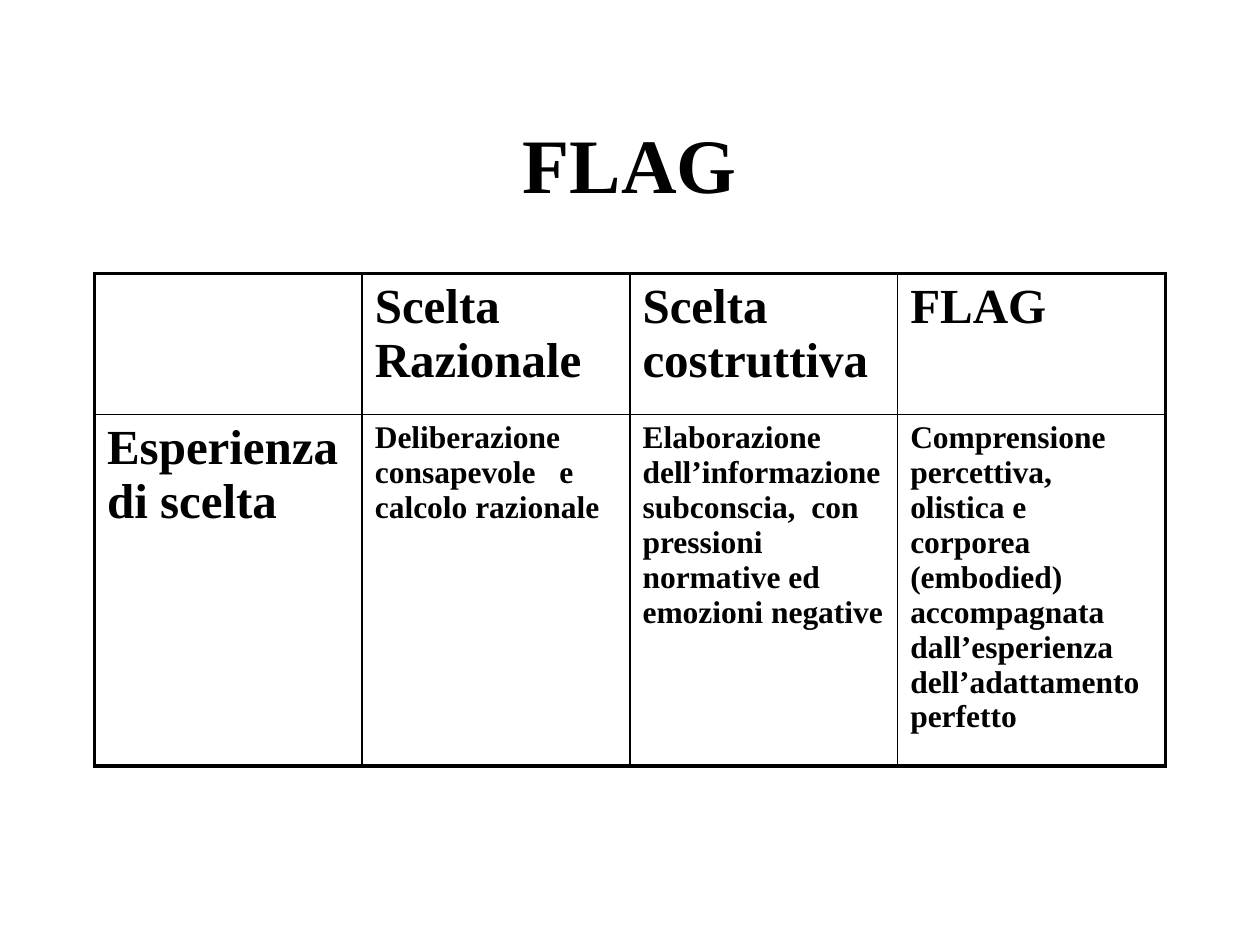
from typing import NamedTuple

from lxml import etree
from pptx import Presentation
from pptx.dml.color import RGBColor
from pptx.enum import text
from pptx.oxml import ns
from pptx.util import Inches, Pt

COLORS = {"ink": "000000"}
FONT = "Times New Roman"
OUTER, INNER = Pt(2.25), Pt(1)


class Entry(NamedTuple):
    wording: str
    size: int


HEADING, BODY = 28, 18
ROWS = [
    [Entry("", HEADING), Entry("Scelta Razionale", HEADING),
     Entry("Scelta costruttiva", HEADING), Entry("FLAG", HEADING)],
    [Entry("Esperienza di scelta", HEADING),
     Entry("Deliberazione consapevole   e calcolo razionale", BODY),
     Entry("Elaborazione dell’informazione subconscia,  con   pressioni "
           "normative ed emozioni negative", BODY),
     Entry("Comprensione percettiva, olistica e corporea (embodied) accompagnata "
           "dall’esperienza dell’adattamento perfetto", BODY)],
]
ROW_HEIGHTS = [1.12, 2.79]


def write(paragraph, wording: str, size: int) -> None:
    run = paragraph.add_run()
    run.text = wording
    run.font.name = FONT
    run.font.size = Pt(size)
    run.font.bold = True
    run.font.color.rgb = RGBColor.from_string(COLORS["ink"])


def set_borders(cell, widths: dict[str, int]) -> None:
    """Put the border lines ahead of the cell's fill, in schema order."""
    properties = cell._tc.get_or_add_tcPr()
    for position, (side, width) in enumerate(widths.items()):
        line = etree.Element(ns.qn(f"a:ln{side}"), w=str(int(width)))
        fill = etree.SubElement(line, ns.qn("a:solidFill"))
        etree.SubElement(fill, ns.qn("a:srgbClr"), val=COLORS["ink"])
        properties.insert(position, line)


def add_comparison(slide) -> None:
    row_count, column_count = len(ROWS), len(ROWS[0])
    width = Inches(8.5)
    comparison = slide.shapes.add_table(
        row_count, column_count, Inches(0.75), Inches(2.17),
        width, Inches(sum(ROW_HEIGHTS))).table
    comparison.first_row = comparison.horz_banding = False
    for column in comparison.columns:
        column.width = width // column_count
    for r, entries in enumerate(ROWS):
        comparison.rows[r].height = Inches(ROW_HEIGHTS[r])
        for c, entry in enumerate(entries):
            cell = comparison.cell(r, c)
            cell.fill.background()
            set_borders(cell, {
                "L": OUTER if c == 0 else INNER,
                "R": OUTER if c == column_count - 1 else INNER,
                "T": OUTER if r == 0 else INNER,
                "B": OUTER if r == row_count - 1 else INNER,
            })
            if entry.wording:
                write(cell.text_frame.paragraphs[0], entry.wording, entry.size)


def main() -> None:
    deck = Presentation()
    deck.slide_width, deck.slide_height = Inches(10), Inches(7.5)
    slide = deck.slides.add_slide(deck.slide_layouts[5])

    # Title
    title = slide.shapes.title
    title.left, title.top = Inches(0.75), Inches(0.67)
    title.width, title.height = Inches(8.5), Inches(1.25)
    title.text_frame.vertical_anchor = text.MSO_ANCHOR.MIDDLE
    heading = title.text_frame.paragraphs[0]
    heading.alignment = text.PP_ALIGN.CENTER
    write(heading, "FLAG", 44)

    # Comparison of the kinds of choice
    add_comparison(slide)
    deck.save("out.pptx")


if __name__ == "__main__":
    main()
